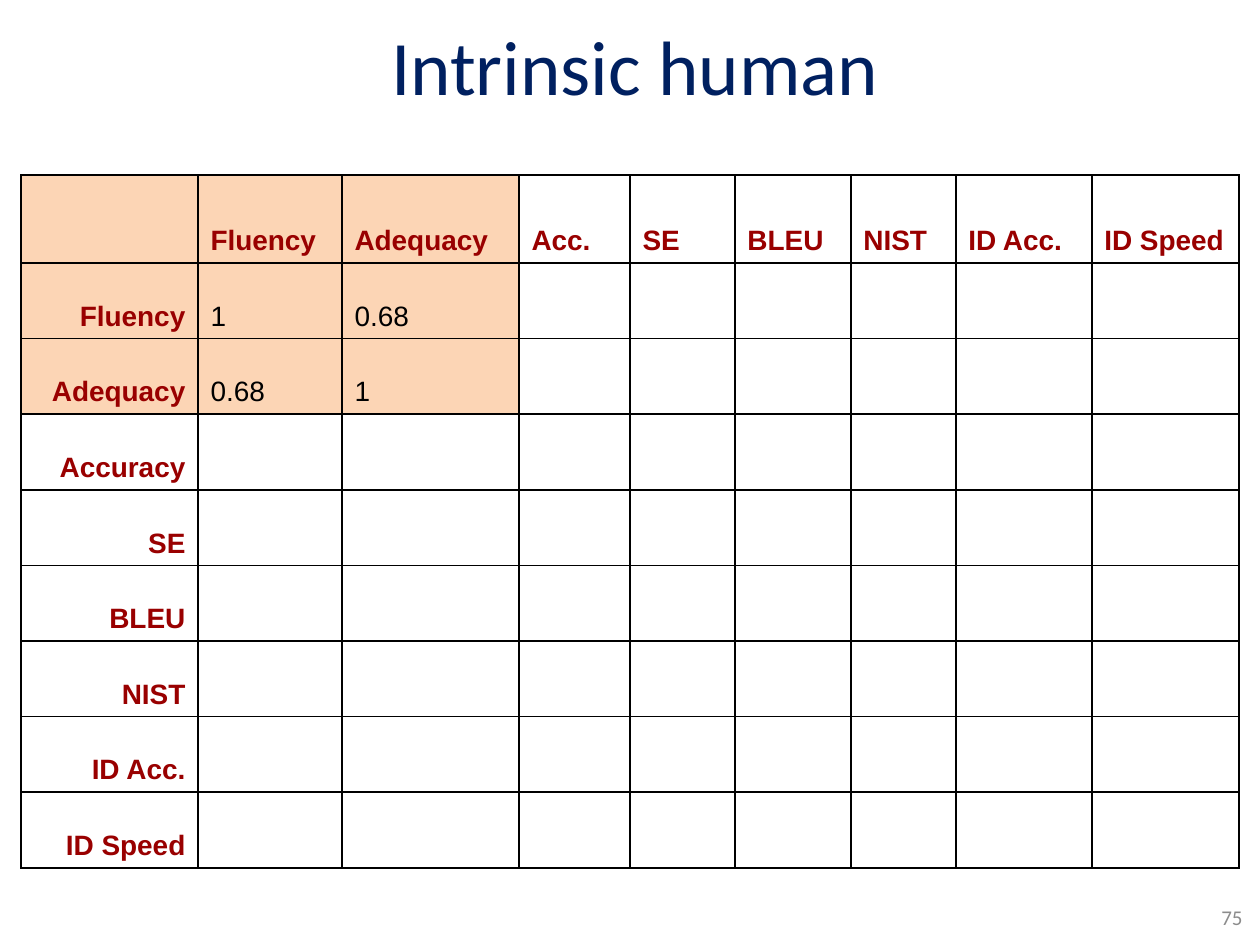
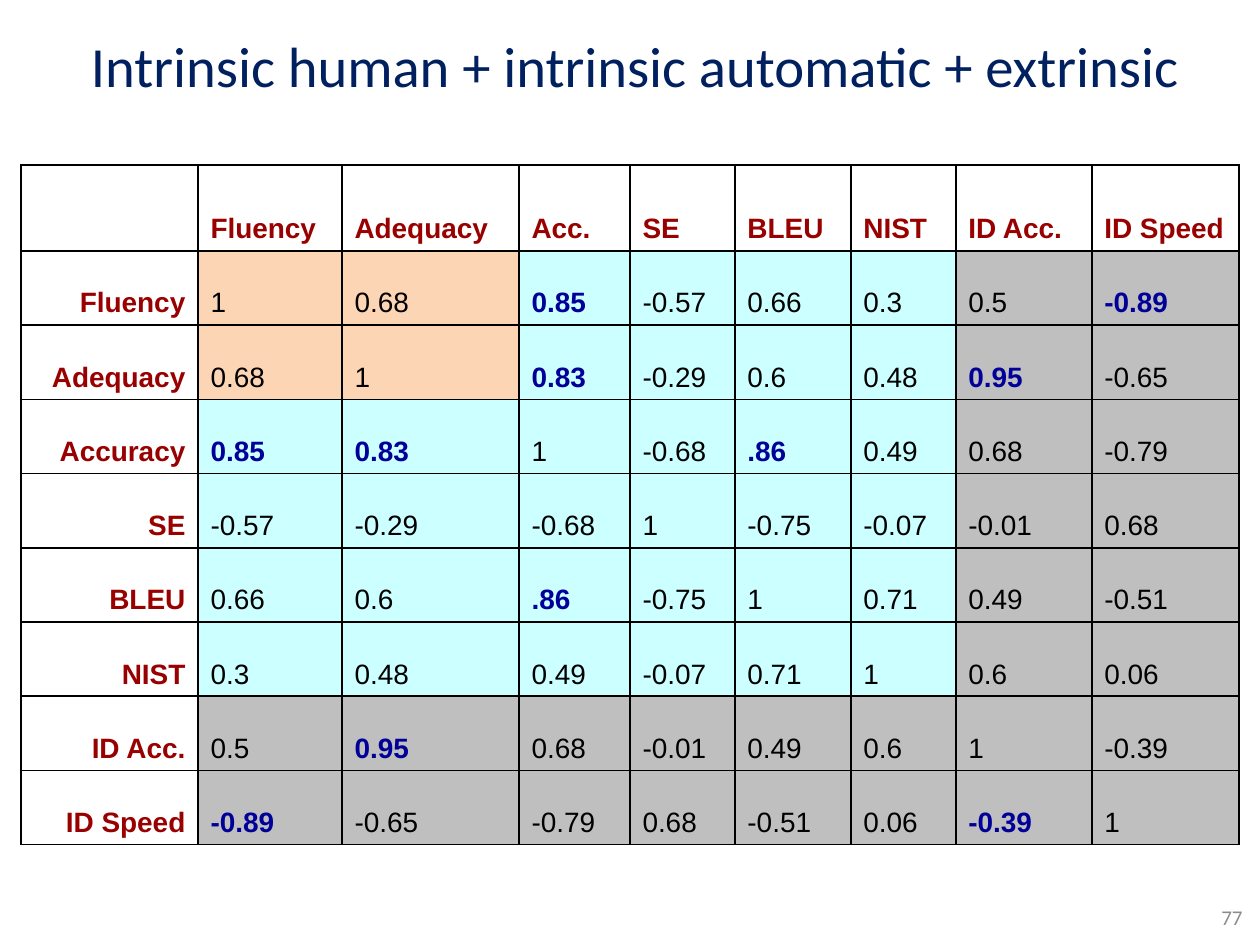
from dataclasses import dataclass

from lxml.etree import SubElement
from pptx import Presentation
from pptx.dml.color import RGBColor
from pptx.enum.text import MSO_ANCHOR, PP_ALIGN
from pptx.oxml.ns import qn
from pptx.util import Pt

EMU_PER_INCH = 914400
PX_PER_INCH = 126


@dataclass(frozen=True)
class Theme:
    heading_font: str = "Calibri"
    table_font: str = "Arial"
    title: str = "002060"
    page_number: str = "8C8C8C"
    label: str = "990000"
    value: str = "000000"
    strong_value: str = "000099"
    border: str = "000000"
    blank: str = "FFFFFF"
    human: str = "FCD5B5"
    automatic: str = "CCFFFF"
    extrinsic: str = "BFBFBF"
    title_size: float = 44
    long_title_size: float = 32.4
    page_number_size: float = 12
    table_size: float = 16
    border_width: float = 1


THEME = Theme()

# Measures in the order of the correlation matrix
COLUMN_LABELS = ["Fluency", "Adequacy", "Acc.", "SE", "BLEU", "NIST", "ID Acc.", "ID Speed"]
ROW_LABELS = ["Fluency", "Adequacy", "Accuracy", "SE", "BLEU", "NIST", "ID Acc.", "ID Speed"]
CORRELATIONS = [row.split() for row in (
    "1 0.68 0.85 -0.57 0.66 0.3 0.5 -0.89",
    "0.68 1 0.83 -0.29 0.6 0.48 0.95 -0.65",
    "0.85 0.83 1 -0.68 .86 0.49 0.68 -0.79",
    "-0.57 -0.29 -0.68 1 -0.75 -0.07 -0.01 0.68",
    "0.66 0.6 .86 -0.75 1 0.71 0.49 -0.51",
    "0.3 0.48 0.49 -0.07 0.71 1 0.6 0.06",
    "0.5 0.95 0.68 -0.01 0.49 0.6 1 -0.39",
    "-0.89 -0.65 -0.79 0.68 -0.51 0.06 -0.39 1",
)]
LAST_HUMAN, LAST_AUTOMATIC = 2, 6
STRONG_FROM = 0.8
ALSO_STRONG = (8, 7)

# Table grid
TABLE_LEFT = 21
COLUMN_WIDTHS = [177, 144, 177, 111, 105, 116, 105, 136, 147]
HANGING_INDENT = 48


def px(length):
    return round(length * EMU_PER_INCH / PX_PER_INCH)


def style(paragraph, font, size, color, bold=False, align=PP_ALIGN.LEFT):
    paragraph.alignment = align
    paragraph.font.name = font
    paragraph.font.size = Pt(size)
    paragraph.font.bold = bold
    paragraph.font.color.rgb = RGBColor.from_string(color)


def add_label(slide, text, box, size, color, align):
    frame = slide.shapes.add_textbox(*map(px, box)).text_frame
    frame.word_wrap = True
    frame.vertical_anchor = MSO_ANCHOR.MIDDLE
    frame.text = text
    style(frame.paragraphs[0], THEME.heading_font, size, color, align=align)


def add_titled_slide(deck, title, title_size, page_number):
    slide = deck.slides.add_slide(deck.slide_layouts[6])
    add_label(slide, page_number, (963, 890, 292, 54),
              THEME.page_number_size, THEME.page_number, PP_ALIGN.RIGHT)
    add_label(slide, title, (64, 0, 1142, 129), title_size, THEME.title, PP_ALIGN.CENTER)
    return slide


def add_borders(cell):
    properties = cell._tc.get_or_add_tcPr()
    for side in ("a:lnL", "a:lnR", "a:lnT", "a:lnB"):
        line = SubElement(properties, qn(side), w=str(Pt(THEME.border_width)))
        fill = SubElement(line, qn("a:solidFill"))
        SubElement(fill, qn("a:srgbClr"), val=THEME.border)


def cell_text(row, column, shown):
    if row == 0:
        return COLUMN_LABELS[column - 1] if column else ""
    if column == 0:
        return ROW_LABELS[row - 1]
    return CORRELATIONS[row - 1][column - 1] if max(row, column) <= shown else ""


def cell_fill(row, column, shown, fill_labels):
    group = max(row, column)
    is_label = row == 0 or column == 0
    if group > shown or (is_label and not fill_labels):
        return THEME.blank
    if group <= LAST_HUMAN:
        return THEME.human
    return THEME.automatic if group <= LAST_AUTOMATIC else THEME.extrinsic


def write_cell(cell, row, column, text):
    cell.vertical_anchor = MSO_ANCHOR.BOTTOM
    cell.text = text
    paragraph = cell.text_frame.paragraphs[0]
    is_label = row == 0 or column == 0
    is_strong = not is_label and text != "" and (
        STRONG_FROM <= abs(float(text)) < 1 or (row, column) == ALSO_STRONG)
    color = THEME.label if is_label else THEME.strong_value if is_strong else THEME.value
    style(paragraph, THEME.table_font, THEME.table_size, color, is_label or is_strong,
          PP_ALIGN.LEFT if column else PP_ALIGN.RIGHT)
    indent = px(HANGING_INDENT)
    properties = paragraph._p.get_or_add_pPr()
    properties.set("marL", str(indent))
    properties.set("indent", str(-indent))


def add_correlation_table(slide, top, height, header_height, shown, fill_labels):
    """Fill in the values of the first `shown` measures only."""
    size = len(ROW_LABELS) + 1
    table = slide.shapes.add_table(size, size, px(TABLE_LEFT), px(top),
                                   px(sum(COLUMN_WIDTHS)), px(height)).table
    table.first_row = table.horz_banding = False
    for column, width in zip(table.columns, COLUMN_WIDTHS):
        column.width = px(width)
    for index, row in enumerate(table.rows):
        row.height = px((height - header_height) / (size - 1) if index else header_height)

    for row in range(size):
        for column in range(size):
            cell = table.cell(row, column)
            write_cell(cell, row, column, cell_text(row, column, shown))
            add_borders(cell)
            cell.fill.solid()
            cell.fill.fore_color.rgb = RGBColor.from_string(
                cell_fill(row, column, shown, fill_labels))


def main():
    deck = Presentation()
    deck.slide_width, deck.slide_height = px(1260), px(945)

    # Human judgements alone
    human = add_titled_slide(deck, "Intrinsic human", THEME.title_size, "75")
    add_correlation_table(human, top=175, height=693, header_height=88,
                          shown=LAST_HUMAN, fill_labels=True)

    # All measures together
    everything = add_titled_slide(deck, "Intrinsic human + intrinsic automatic + extrinsic",
                                  THEME.long_title_size, "77")
    add_correlation_table(everything, top=165, height=680, header_height=86,
                          shown=len(ROW_LABELS), fill_labels=False)

    deck.save("out.pptx")


if __name__ == "__main__":
    main()
